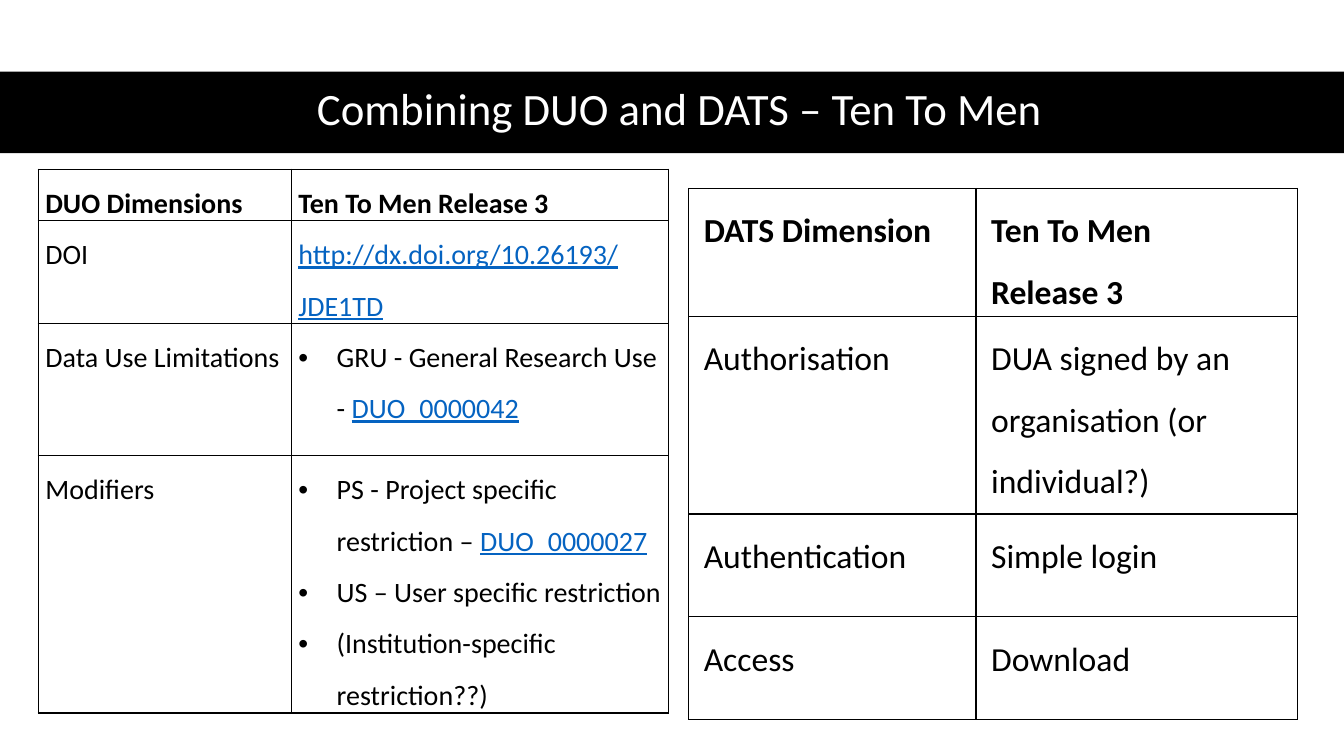
from lxml import etree
from pptx import Presentation
from pptx.dml.color import RGBColor
from pptx.enum.shapes import MSO_SHAPE
from pptx.enum.text import MSO_ANCHOR, MSO_AUTO_SIZE, PP_ALIGN
from pptx.oxml.ns import qn
from pptx.util import Inches, Pt

RECTANGLE = MSO_SHAPE.RECTANGLE
MIDDLE, TOP = MSO_ANCHOR.MIDDLE, MSO_ANCHOR.TOP
NO_AUTOFIT = MSO_AUTO_SIZE.NONE
CENTER = PP_ALIGN.CENTER
TITLE_ONLY = 5

FONT = "Calibri"
BLACK, WHITE, LINK_BLUE = "000000", "FFFFFF", "0563C1"

# A cell is a list of paragraphs, a paragraph a list of texts;
# texts that start with a link prefix are shown as links.
LINK_PREFIXES = ("http", "DUO_")
BULLET = "•"

DUO_ROWS = [
    [[["DUO Dimensions"]], [["Ten To Men Release 3"]]],
    [[["DOI"]], [["http://dx.doi.org/10.26193/JDE1TD"]]],
    [[["Data Use Limitations"]],
     [[BULLET, "GRU - General Research Use - ", "DUO_0000042"]]],
    [[["Modifiers"]],
     [[BULLET, "PS - Project specific restriction – ", "DUO_0000027"],
      [BULLET, "US – User specific restriction"],
      [BULLET, "(Institution-specific restriction??)"]]],
]
DATS_ROWS = [
    [[["DATS Dimension"]], [["Ten To Men"], ["Release 3"]]],
    [[["Authorisation"]], [["DUA signed by an organisation (or individual?)"]]],
    [[["Authentication"]], [["Simple login"]]],
    [[["Access"]], [["Download"]]],
]


def color(hex_value):
    return RGBColor.from_string(hex_value)


def add_text(para, text, size, ink=BLACK, bold=False, underline=False):
    span = para.add_run()
    span.text = text
    span.font.name = FONT
    span.font.size = Pt(size)
    span.font.color.rgb = color(ink)
    span.font.bold = bold
    span.font.underline = underline


def add_bullet(para, indent=0.38):
    properties = para._p.get_or_add_pPr()
    properties.set("marL", str(Inches(indent)))
    properties.set("indent", str(-Inches(indent)))
    etree.SubElement(properties, qn("a:buFont"), typeface="Arial")
    etree.SubElement(properties, qn("a:buChar"), char=BULLET)


def add_borders(cell, ink=BLACK, width=1):
    """Outline the cell; call before its fill, which must follow the lines."""
    properties = cell._tc.get_or_add_tcPr()
    for side in ("a:lnL", "a:lnR", "a:lnT", "a:lnB"):
        line = etree.SubElement(properties, qn(side), w=str(Pt(width)))
        fill = etree.SubElement(line, qn("a:solidFill"))
        etree.SubElement(fill, qn("a:srgbClr"), val=ink)


def fill_cell(cell, paragraphs, size, bold, side_margin, top_margin):
    add_borders(cell)
    cell.fill.solid()
    cell.fill.fore_color.rgb = color(WHITE)
    cell.margin_left = cell.margin_right = Inches(side_margin)
    cell.margin_top, cell.margin_bottom = Inches(top_margin), 0
    cell.vertical_anchor = TOP
    frame = cell.text_frame
    for number, texts in enumerate(paragraphs):
        para = frame.add_paragraph() if number else frame.paragraphs[0]
        para.line_spacing = 1.5
        for text in texts:
            if text == BULLET:
                add_bullet(para)
            elif text.startswith(LINK_PREFIXES):
                add_text(para, text, size, ink=LINK_BLUE, underline=True)
            else:
                add_text(para, text, size, bold=bold)


def add_dimension_table(page, left, top, widths, heights, rows, size, **margins):
    table = page.shapes.add_table(
        len(rows), len(widths), Inches(left), Inches(top),
        Inches(sum(widths)), Inches(sum(heights))).table
    table.first_row = table.horz_banding = False
    for column, width in zip(table.columns, widths):
        column.width = Inches(width)
    for row, height in zip(table.rows, heights):
        row.height = Inches(height)
    for r, row in enumerate(rows):
        for c, paragraphs in enumerate(row):
            fill_cell(table.cell(r, c), paragraphs, size, r == 0, **margins)


def add_title_bar(page, text, top, width, height):
    bar = page.shapes.add_shape(
        RECTANGLE, 0, Inches(top), Inches(width), Inches(height))
    bar.shadow.inherit = False
    bar.fill.solid()
    bar.fill.fore_color.rgb = color(BLACK)
    bar.line.fill.background()

    title = page.shapes.title
    title.left, title.top = Inches(0.61), Inches(top - 0.01)
    title.width, title.height = Inches(12.26), Inches(height)
    bar._element.addnext(title._element)  # bring the title in front of the bar
    frame = title.text_frame
    frame.auto_size = NO_AUTOFIT
    frame.word_wrap = True
    frame.vertical_anchor = MIDDLE
    para = frame.paragraphs[0]
    para.alignment = CENTER
    para.line_spacing = 0.9
    add_text(para, text, 32, ink=WHITE)


def main():
    deck = Presentation()
    deck.slide_width, deck.slide_height = Inches(13.33), Inches(7.5)
    page = deck.slides.add_slide(deck.slide_layouts[TITLE_ONLY])
    add_title_bar(page, "Combining DUO and DATS – Ten To Men",
                  top=0.71, width=13.33, height=0.81)
    add_dimension_table(page, 0.38, 1.68, [2.51, 3.74], [0.44, 0.88, 1.31, 2.17],
                        DUO_ROWS, size=20, side_margin=0.07, top_margin=0)
    add_dimension_table(page, 6.83, 1.87, [2.85, 3.19], [1.27, 1.96, 1.02, 1.02],
                        DATS_ROWS, size=24, side_margin=0.15, top_margin=0.02)
    deck.save("out.pptx")


if __name__ == "__main__":
    main()
